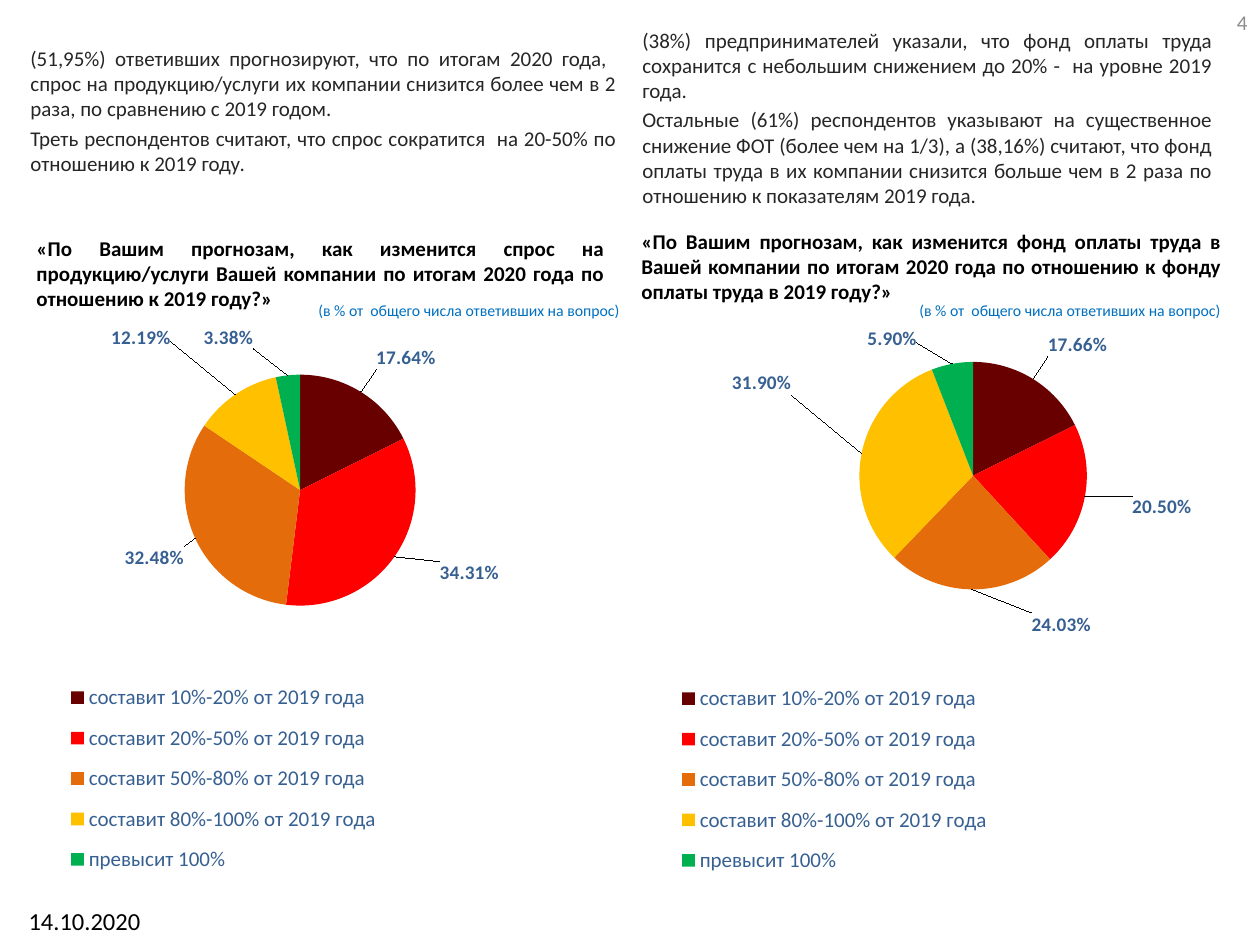
from math import cos, pi, sin
from lxml.etree import SubElement
from pptx import Presentation
from pptx.chart.data import CategoryChartData
from pptx.dml.color import RGBColor
from pptx.enum.chart import XL_CHART_TYPE, XL_LABEL_POSITION, XL_LEGEND_POSITION
from pptx.enum.text import MSO_ANCHOR, PP_ALIGN
from pptx.oxml import parse_xml
from pptx.oxml.ns import nsdecls, qn
from pptx.util import Pt

PX = 914400 // 126
BLACK = RGBColor(0x00, 0x00, 0x00)
DARK = RGBColor(0x26, 0x26, 0x26)
GREY = RGBColor(0x8C, 0x8C, 0x8C)
BLUE = RGBColor(0x00, 0x70, 0xC0)
NAVY = RGBColor(0x37, 0x60, 0x92)
SLICES = [
    RGBColor(0x68, 0x00, 0x00),
    RGBColor(0xFF, 0x00, 0x00),
    RGBColor(0xE4, 0x6C, 0x0A),
    RGBColor(0xFF, 0xC0, 0x00),
    RGBColor(0x00, 0xB0, 0x50),
]
CATEGORIES = [
    "составит 10%-20% от 2019 года",
    "составит 20%-50% от 2019 года",
    "составит 50%-80% от 2019 года",
    "составит 80%-100% от 2019 года",
    "превысит 100%",
]
NOTE = "(в % от  общего числа ответивших на вопрос)"
CHART_WIDTH, CHART_HEIGHT = 605, 573
LABEL_WIDTH, LABEL_HEIGHT = 60, 20

presentation = Presentation()
presentation.slide_width = 1260 * PX
presentation.slide_height = 945 * PX
slide = presentation.slides.add_slide(presentation.slide_layouts[6])


def add_text(box, paragraphs, size, color, align=PP_ALIGN.JUSTIFY,
             anchor=MSO_ANCHOR.TOP, bold=False, wrap=True, gap=0.2):
    shape = slide.shapes.add_textbox(*[value * PX for value in box])
    text_frame = shape.text_frame
    text_frame.word_wrap = wrap
    text_frame.vertical_anchor = anchor
    text_frame.text = "\n".join(paragraphs)
    for paragraph in text_frame.paragraphs:
        paragraph.alignment = align
        paragraph.space_before = Pt(size * gap)
        for run in paragraph.runs:
            set_font(run.font, size, color, bold)


def set_font(font, size, color, bold=False):
    font.name = "Calibri"
    font.size = Pt(size)
    font.bold = bold
    font.color.rgb = color


summaries = [
    ((18, 33, 611, 149), [
        "(51,95%) ответивших прогнозируют, что по итогам 2020 года,  спрос на продукцию/услуги их компании снизится более чем в 2 раза, по сравнению с 2019 годом.",
        "Треть респондентов считают, что спрос сократится  на 20-50% по отношению к 2019 году.",
    ]),
    ((630, 84, 595, 130), [
        "(38%) предпринимателей указали, что фонд оплаты труда сохранится с небольшим снижением до 20% -  на уровне 2019 года.",
        "Остальные (61%) респондентов указывают на существенное снижение ФОТ (более чем на 1/3), а (38,16%) считают, что фонд оплаты труда в их компании снизится больше чем в 2 раза по отношению к показателям 2019 года. ",
    ]),
]
for box, paragraphs in summaries:
    add_text(box, paragraphs, 12, DARK, anchor=MSO_ANCHOR.BOTTOM)

questions = [
    ((24, 229, 593, 139), "«По Вашим прогнозам, как изменится спрос на продукцию/услуги Вашей компании по итогам 2020 года по отношению к 2019 году?»"),
    ((629, 222, 605, 151), "«По Вашим прогнозам, как изменится фонд оплаты труда в Вашей компании по итогам 2020 года по отношению к фонду оплаты труда в 2019 году?»"),
]
for box, question in questions:
    add_text(box, [question], 12, BLACK, bold=True)

for left in (306, 907):
    add_text((left, 295, 329, 32), [NOTE], 9, BLUE, PP_ALIGN.LEFT, wrap=False, gap=0)
add_text((966, -3, 294, 50), ["4"], 12, GREY, PP_ALIGN.RIGHT, MSO_ANCHOR.MIDDLE, gap=0)
add_text((0, 900, 169, 45), ["14.10.2020"], 14, BLACK, PP_ALIGN.CENTER)

pies = [
    (24, 326, (0.094, 0.085, 0.725, 0.403), (301, 490, 115),
     [0.1764, 0.3431, 0.3248, 0.1219, 0.0338],
     [(403, 366), (464, 567), (162, 553), (146, 338), (225, 346)]),
    (635, 327, (0.201, 0.061, 0.716, 0.397), (974, 475, 114),
     [0.1766, 0.205, 0.2403, 0.319, 0.059],
     [(1075, 352), (1156, 503), (1032, 615), (769, 386), (889, 339)]),
]
for left, top, plot_box, (center_x, center_y, radius), values, label_centers in pies:
    chart_data = CategoryChartData(number_format="0.00%")
    chart_data.categories = CATEGORIES
    chart_data.add_series("Series 1", values)
    chart = slide.shapes.add_chart(
        XL_CHART_TYPE.PIE, left * PX, top * PX,
        CHART_WIDTH * PX, CHART_HEIGHT * PX, chart_data).chart
    chart.has_title = False
    set_font(chart.font, 10, BLACK)
    chart.has_legend = True
    chart.legend.position = XL_LEGEND_POSITION.BOTTOM
    chart.legend.include_in_layout = False
    set_font(chart.legend.font, 12, NAVY)

    plot = chart.plots[0]
    plot.vary_by_categories = True
    series = plot.series[0]
    labels = series.data_labels
    labels.show_value = True
    labels.number_format = "0.00%"
    labels.number_format_is_linked = False
    labels.position = XL_LABEL_POSITION.OUTSIDE_END
    set_font(labels.font, 11, NAVY, True)

    layouts = []
    start = 0
    for index, (value, (x, y)) in enumerate(zip(values, label_centers)):
        point = series.points[index]
        point.format.fill.solid()
        point.format.fill.fore_color.rgb = SLICES[index]
        set_font(point.data_label.font, 11, NAVY, True)
        point.data_label.position = XL_LABEL_POSITION.OUTSIDE_END
        angle = 2 * pi * (start + value / 2) / sum(values)
        start += value
        side = 1 if sin(angle) > 0 else -1
        level = -1 if cos(angle) > 0 else 1
        default_x = center_x + radius * sin(angle) + side * LABEL_WIDTH / 2
        default_y = center_y - radius * cos(angle) + level * LABEL_HEIGHT / 2
        layouts.append({"x": (x - default_x) / CHART_WIDTH, "y": (y - default_y) / CHART_HEIGHT})

    chart_space = chart.element
    targets = list(chart_space.iter(qn("c:dLbl")))
    targets += [next(chart_space.iter(qn("c:plotArea"))), next(chart_space.iter(qn("c:legend")))]
    modes = {"xMode": "edge", "yMode": "edge"}
    layouts.append({"layoutTarget": "inner", **modes, **dict(zip("xywh", plot_box))})
    layouts.append({**modes, "x": 0.04, "y": 0.6, "w": 0.58, "h": 0.38})
    for target, settings in zip(targets, layouts):
        for old_layout in target.findall(qn("c:layout")):
            target.remove(old_layout)
        layout = parse_xml(f"<c:layout {nsdecls('c')}><c:manualLayout/></c:layout>")
        for name, setting in settings.items():
            setting = setting if isinstance(setting, str) else f"{setting:.3f}"
            SubElement(layout[0], qn(f"c:{name}")).set("val", setting)
        target.insert(0 if target.tag == qn("c:plotArea") else 1, layout)

presentation.save("out.pptx")
